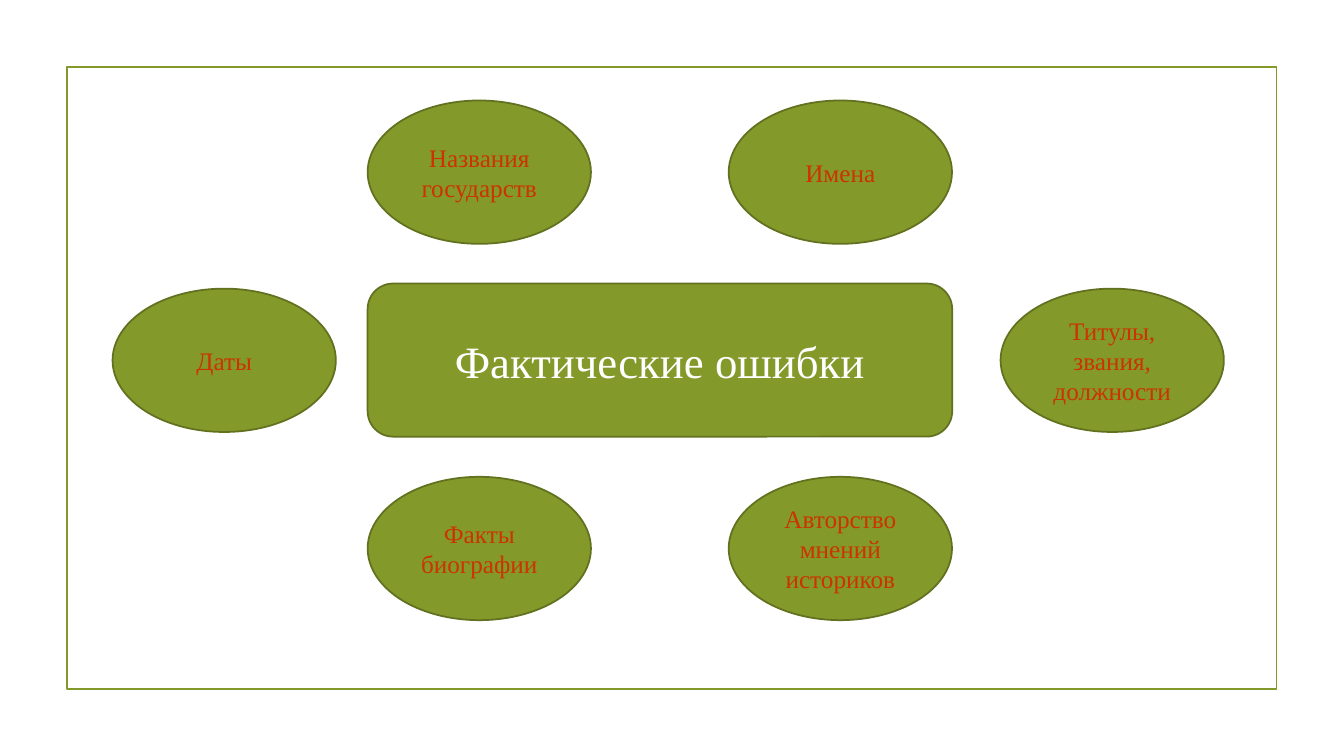
"""Builds a slide of factual error types arranged around a central title."""
from dataclasses import dataclass
from typing import Optional

from pptx import Presentation
from pptx.dml.color import RGBColor
from pptx.enum.shapes import MSO_SHAPE
from pptx.enum.text import MSO_ANCHOR, PP_ALIGN
from pptx.shapes.autoshape import Shape
from pptx.slide import Slide
from pptx.util import Pt

OLIVE = RGBColor(0x83, 0x99, 0x2A)
DARK_OLIVE = RGBColor(0x61, 0x71, 0x1F)
WHITE = RGBColor(0xFF, 0xFF, 0xFF)
RED = RGBColor(0xCC, 0x33, 0x00)

FONT = "Times New Roman"
OVAL_WIDTH, OVAL_HEIGHT = 159.5, 102.4
COLUMNS = (80.4, 262.6, 520.5, 714.7)
FIRST_ROW, ROW_STEP = 71.8, 134.4


@dataclass(frozen=True)
class ErrorType:
    """A kind of factual error and its place in the grid of ovals."""
    text: str
    column: int
    row: int


ERROR_TYPES = (
    ErrorType("Даты", 0, 1),
    ErrorType("Названия государств", 1, 0),
    ErrorType("Имена", 2, 0),
    ErrorType("Титулы, звания, должности", 3, 1),
    ErrorType("Факты биографии", 1, 2),
    ErrorType("Авторство мнений историков", 2, 2),
)


def add_box(page: Slide, kind: MSO_SHAPE, left: float, top: float, width: float,
            height: float, line: RGBColor, fill: Optional[RGBColor] = None) -> Shape:
    """Draw an outlined shape, filled when a fill colour is given."""
    box = page.shapes.add_shape(kind, Pt(left), Pt(top), Pt(width), Pt(height))
    box.shadow.inherit = False
    box.line.color.rgb = line
    box.line.width = Pt(1.25)
    if fill is None:
        box.fill.background()
    else:
        box.fill.solid()
        box.fill.fore_color.rgb = fill
    return box


def add_label(box: Shape, text: str, size: float, color: RGBColor) -> None:
    """Write centred text inside a shape."""
    frame = box.text_frame
    frame.word_wrap = True
    frame.vertical_anchor = MSO_ANCHOR.MIDDLE
    para = frame.paragraphs[0]
    para.alignment = PP_ALIGN.CENTER
    span = para.add_run()
    span.text = text
    span.font.name = FONT
    span.font.size = Pt(size)
    span.font.color.rgb = color


def main() -> None:
    """Build and save the deck."""
    deck = Presentation()
    deck.slide_width, deck.slide_height = Pt(960), Pt(540)
    page = deck.slides.add_slide(deck.slide_layouts[6])

    add_box(page, MSO_SHAPE.RECTANGLE, 47.8, 48, 864, 444, OLIVE)
    title = add_box(page, MSO_SHAPE.ROUNDED_RECTANGLE, COLUMNS[1], 202.5, 417.6, 109.4,
                    DARK_OLIVE, OLIVE)
    add_label(title, "Фактические ошибки", 32, WHITE)

    for error in ERROR_TYPES:
        oval = add_box(page, MSO_SHAPE.OVAL, COLUMNS[error.column],
                       FIRST_ROW + error.row * ROW_STEP, OVAL_WIDTH, OVAL_HEIGHT,
                       DARK_OLIVE, OLIVE)
        add_label(oval, error.text, 18, RED)

    deck.save("out.pptx")


if __name__ == "__main__":
    main()
